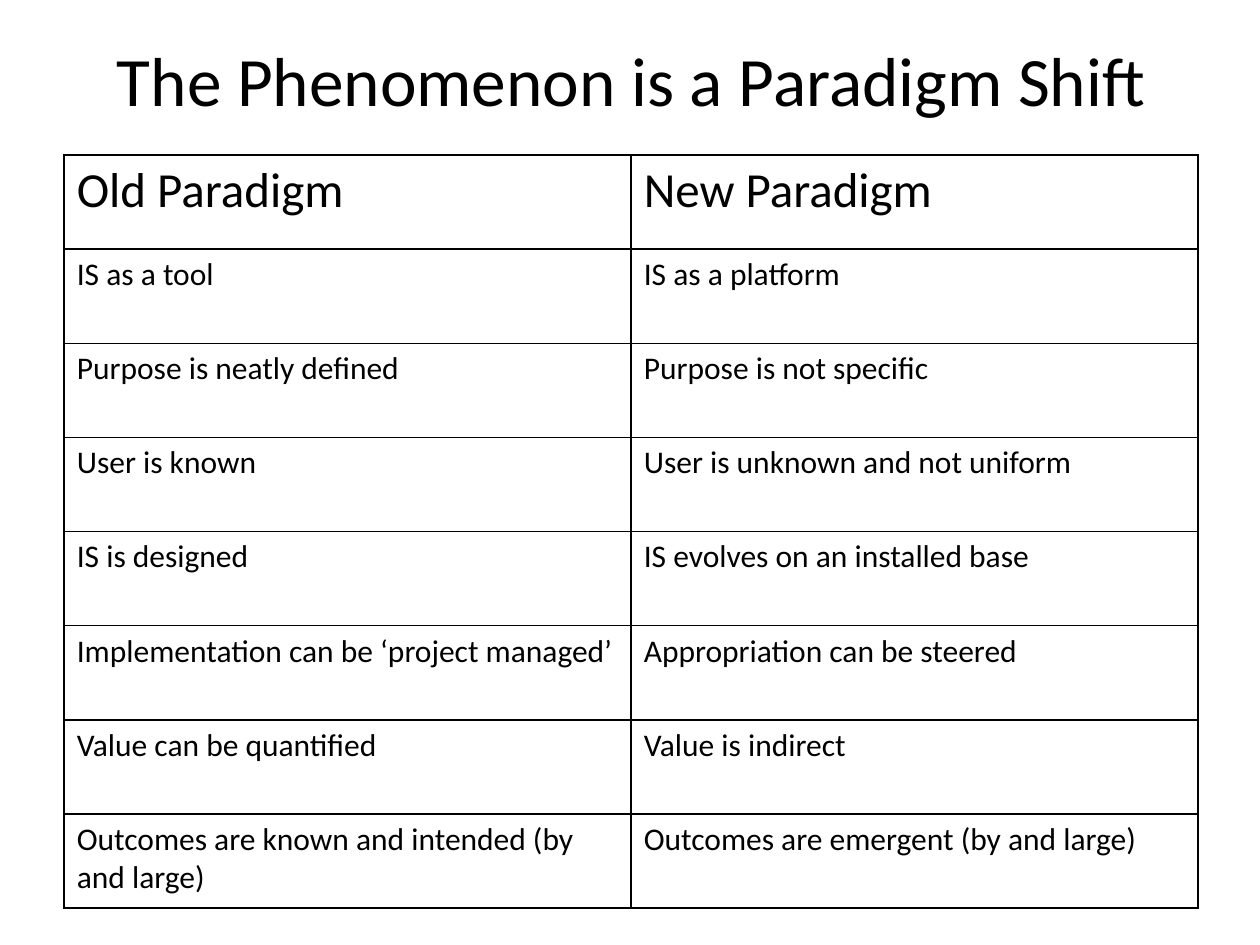
from lxml import etree
from pptx import Presentation
from pptx.dml.color import RGBColor
from pptx.enum.text import MSO_ANCHOR, PP_ALIGN
from pptx.oxml.ns import qn
from pptx.util import Inches, Pt

MIDDLE = MSO_ANCHOR.MIDDLE
CENTER = PP_ALIGN.CENTER

TITLE = "The Phenomenon is a Paradigm Shift"
ROWS = [
    ("Old Paradigm", "New Paradigm"),
    ("IS as a tool", "IS as a platform"),
    ("Purpose is neatly defined", "Purpose is not specific"),
    ("User is known", "User is unknown and not uniform"),
    ("IS is designed", "IS evolves on an installed base"),
    ("Implementation can be ‘project managed’", "Appropriation can be steered"),
    ("Value can be quantified", "Value is indirect"),
    ("Outcomes are known and intended (by and large)",
     "Outcomes are emergent (by and large)"),
]
THEME = {"font": "Calibri", "ink": "000000", "title": 39.6, "head": 28,
         "body": 18, "line": 1}
LEFT, WIDTH = Inches(0.51), Inches(9)
TOP, HEIGHT = Inches(1.23), Inches(5.98)


def style(frame, size):
    for par in frame.paragraphs:
        for run in par.runs:
            run.font.name = THEME["font"]
            run.font.size = Pt(size)
            run.font.bold = False
            run.font.color.rgb = RGBColor.from_string(THEME["ink"])


def frame_cell(cell):
    """Rule all four sides of the cell and clear its fill."""
    cell.fill.background()
    props = cell._tc.get_or_add_tcPr()
    for spot, side in enumerate(("lnL", "lnR", "lnT", "lnB")):
        line = etree.Element(qn(f"a:{side}"), w=str(Pt(THEME["line"])))
        fill = etree.SubElement(line, qn("a:solidFill"))
        etree.SubElement(fill, qn("a:srgbClr"), val=THEME["ink"])
        props.insert(spot, line)


def add_title(slide):
    title = slide.shapes.title
    title.left, title.top = LEFT, 0
    title.width, title.height = WIDTH, Inches(1.25)
    frame = title.text_frame
    frame.text = TITLE
    frame.vertical_anchor = MIDDLE
    frame.paragraphs[0].alignment = CENTER
    style(frame, THEME["title"])


def add_grid(slide):
    grid = slide.shapes.add_table(
        len(ROWS), len(ROWS[0]), LEFT, TOP, WIDTH, HEIGHT).table
    grid.first_row = grid.horz_banding = False
    for r, row in enumerate(ROWS):
        for c, text in enumerate(row):
            cell = grid.cell(r, c)
            cell.text_frame.text = text
            style(cell.text_frame, THEME["body"] if r else THEME["head"])
            frame_cell(cell)


def main():
    deck = Presentation()
    deck.slide_width, deck.slide_height = Inches(10), Inches(7.5)
    slide = deck.slides.add_slide(deck.slide_layouts[5])
    add_title(slide)
    add_grid(slide)
    deck.save("out.pptx")


if __name__ == "__main__":
    main()
